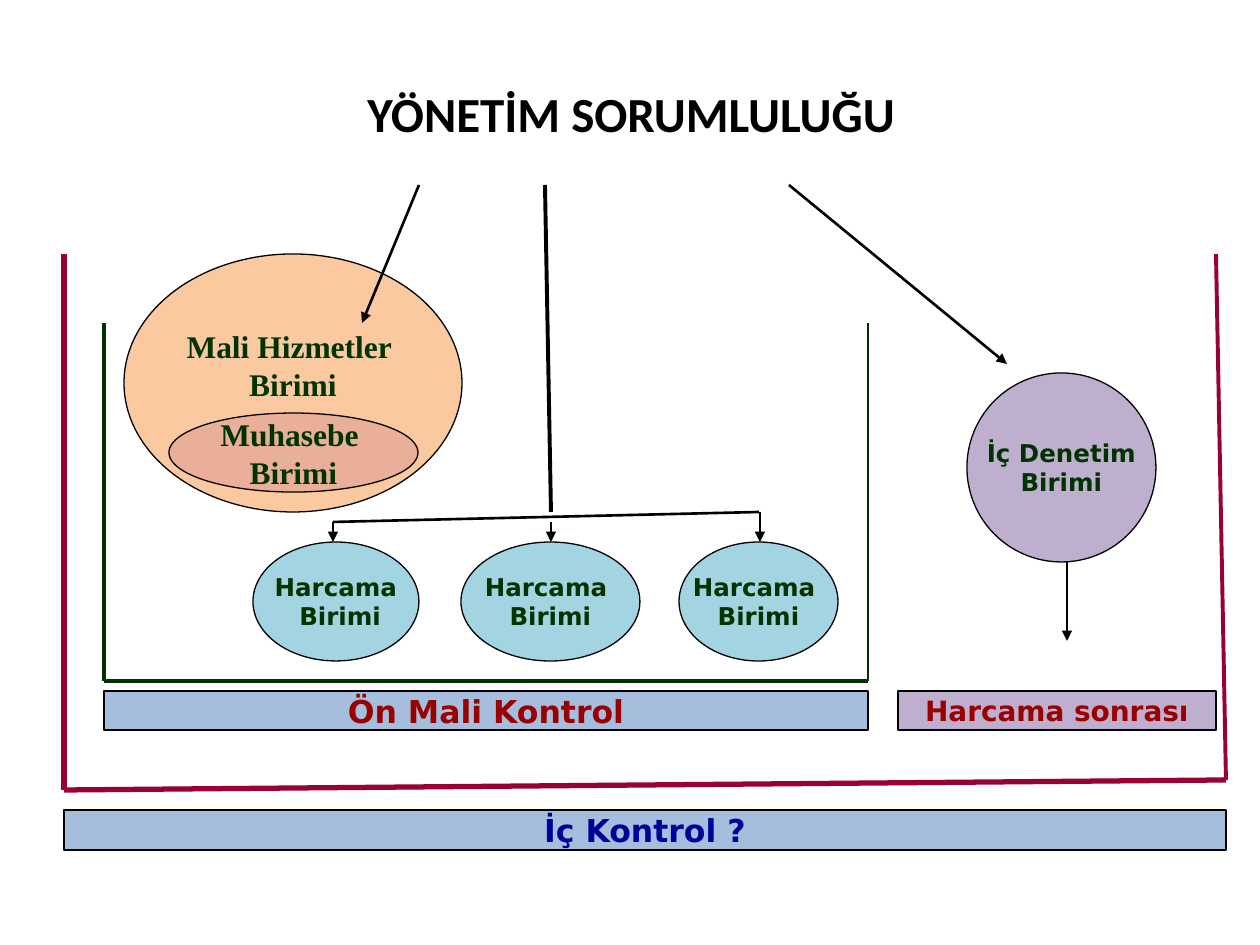
import dataclasses

import pptx
import pptx.dml.color
import pptx.enum.shapes
import pptx.enum.text
import pptx.oxml
import pptx.oxml.ns
import pptx.util

PX = 914400 / 126
SHAPES = pptx.enum.shapes.MSO_SHAPE


@dataclasses.dataclass(frozen=True)
class Theme:
    black: str = "000000"
    green: str = "003300"
    red: str = "990000"
    navy: str = "000099"
    crimson: str = "990033"
    orange: str = "F79646"
    rose: str = "D99694"
    purple: str = "8064A2"
    aqua: str = "4BACC6"
    blue: str = "4F81BD"
    fill_opacity: int = 51
    outline: float = 0.75
    title_font: str = "Calibri"
    serif: str = "Times New Roman"
    sans: str = "DejaVu Sans"
    title_size: int = 28
    large: int = 18
    medium: int = 16
    small: int = 14


THEME = Theme()


def px(length):
    return pptx.util.Emu(round(length * PX))


def rgb(color):
    return pptx.dml.color.RGBColor.from_string(color)


def add_element(parent, tag, **attributes):
    element = pptx.oxml.ns.qn(tag)
    child = parent.makeelement(element, attributes)
    parent.append(child)
    return child


def write_text(frame, text, font=THEME.sans, size=THEME.small,
               color=THEME.green, wrap=False, bottom=6):
    frame.word_wrap = wrap
    frame.vertical_anchor = pptx.enum.text.MSO_ANCHOR.MIDDLE
    frame.margin_top, frame.margin_bottom = px(6), px(bottom)
    for index, line in enumerate(text.split("\n")):
        para = frame.paragraphs[0] if index == 0 else frame.add_paragraph()
        para.alignment = pptx.enum.text.PP_ALIGN.CENTER
        span = para.add_run()
        span.text = line
        span.font.name = font
        span.font.size = pptx.util.Pt(size)
        span.font.bold = True
        span.font.color.rgb = rgb(color)


def add_title(page, text, left, top, width, height):
    title = page.shapes.title
    title.left, title.top = px(left), px(top)
    title.width, title.height = px(width), px(height)
    write_text(title.text_frame, text, font=THEME.title_font,
               size=THEME.title_size, color=THEME.black, wrap=True)


def add_unit(page, kind, bounds, fill, text, **text_format):
    shape = page.shapes.add_shape(kind, *map(px, bounds))
    shape.shadow.inherit = False
    shape.fill.solid()
    shape.fill.fore_color.rgb = rgb(fill)
    color = shape.fill._xPr.find(".//" + pptx.oxml.ns.qn("a:srgbClr"))
    add_element(color, "a:alpha", val=str(THEME.fill_opacity * 1000))
    shape.line.color.rgb = rgb(THEME.black)
    shape.line.width = pptx.util.Pt(THEME.outline)
    write_text(shape.text_frame, text, **text_format)


def add_line(page, start, end, width=THEME.outline, color=THEME.black,
             arrow=False):
    line = page.shapes.add_connector(
        pptx.enum.shapes.MSO_CONNECTOR.STRAIGHT, *map(px, start + end))
    line.line.color.rgb = rgb(color)
    line.line.width = pptx.util.Pt(width)
    if arrow:
        add_element(line.line._get_or_add_ln(), "a:tailEnd", type="triangle")
    add_element(line._element.spPr, "a:effectLst")


def add_bracket(page, corners, widths, color):
    for start, end, width in zip(corners, corners[1:], widths):
        add_line(page, start, end, width, color)


def add_spending_units(page):
    units = [
        (253, 166, "Harcama\n Birimi", 333, 522, 0.75),
        (461, 179, "Harcama \nBirimi", 551, 522, 1),
        (679, 159, "Harcama \nBirimi", 760, 512, 0.75),
    ]
    top = 542
    for left, width, text, arrow_x, arrow_y, weight in units:
        add_unit(page, SHAPES.OVAL, (left, top, width, 119), THEME.aqua, text)
        add_line(page, (arrow_x, arrow_y), (arrow_x, top), weight, arrow=True)
    add_line(page, (333, 522), (759, 512), 1.5)


def main():
    deck = pptx.Presentation()
    deck.slide_width, deck.slide_height = px(1260), px(945)
    page = deck.slides.add_slide(deck.slide_layouts[5])
    add_title(page, "YÖNETİM SORUMLULUĞU", 64, 69, 1134, 87)

    add_unit(page, SHAPES.OVAL, (124, 254, 338, 258), THEME.orange,
             "Mali Hizmetler \nBirimi", font=THEME.serif, size=THEME.large,
             bottom=42)
    add_unit(page, SHAPES.OVAL, (169, 413, 249, 79), THEME.rose,
             "Muhasebe \nBirimi", font=THEME.serif, size=THEME.large)
    add_unit(page, SHAPES.OVAL, (967, 373, 189, 189), THEME.purple,
             "İç Denetim\nBirimi")
    add_spending_units(page)

    add_bracket(page, [(104, 323), (104, 681), (868, 681), (868, 323)],
                [2.25, 2.25, 1.5], THEME.green)
    add_bracket(page, [(64, 254), (64, 790), (1226, 780), (1216, 254)],
                [3, 3, 2.25], THEME.crimson)

    add_line(page, (419, 185), (362, 323), 1.5, arrow=True)
    add_line(page, (545, 185), (551, 512), 2.25)
    add_line(page, (789, 185), (1007, 364), 1.5, arrow=True)
    add_line(page, (1067, 562), (1067, 641), arrow=True)

    add_unit(page, SHAPES.RECTANGLE, (104, 691, 764, 39), THEME.blue,
             "Ön Mali Kontrol", size=THEME.large, color=THEME.red)
    add_unit(page, SHAPES.RECTANGLE, (898, 691, 318, 39), THEME.purple,
             "Harcama sonrası", size=THEME.medium, color=THEME.red)
    add_unit(page, SHAPES.RECTANGLE, (64, 810, 1162, 40), THEME.blue,
             "İç Kontrol ?", size=THEME.large, color=THEME.navy)

    deck.save("out.pptx")


if __name__ == "__main__":
    main()
